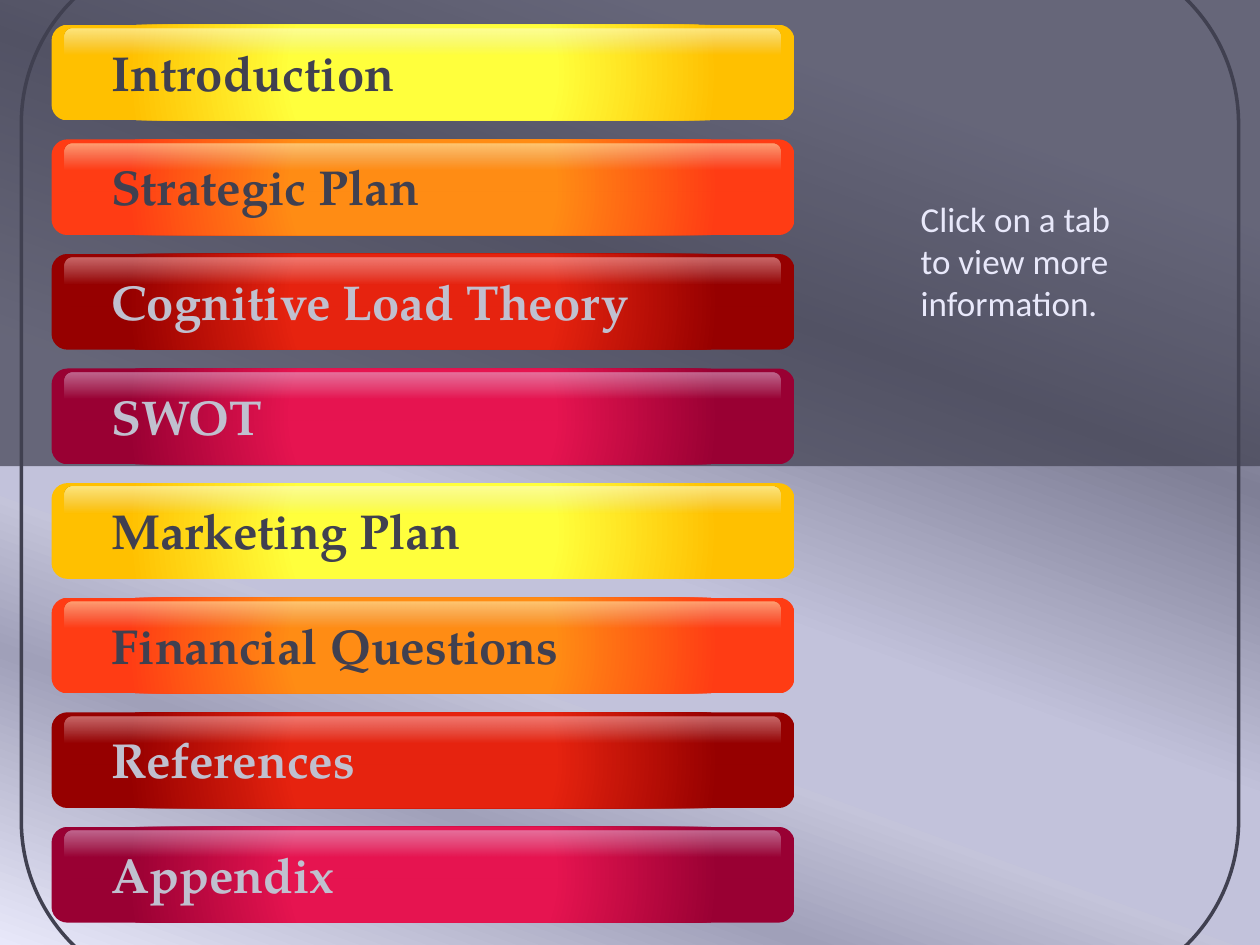
"""Build a navigation slide with eight glossy tabs and a short instruction."""
from lxml import etree
from pptx import Presentation
from pptx.dml.color import RGBColor
from pptx.enum.shapes import MSO_SHAPE
from pptx.oxml import parse_xml
from pptx.oxml.ns import nsdecls, qn
from pptx.util import Cm, Pt

ROUNDED = MSO_SHAPE.ROUNDED_RECTANGLE
RECTANGLE = MSO_SHAPE.RECTANGLE
DARK, SILVER, PALE = "404050", "C0C0CF", "E8E8FA"
LINEAR = '<a:lin ang="{}" scaled="0"/>'
RADIAL = '<a:path path="circle"><a:fillToRect l="50000" t="50000" r="50000" b="50000"/></a:path>'


def set_gradient(properties, stops, direction):
    """Replace the solid fill by (position, colour, opacity) stops in percent."""
    marks = "".join(
        f'<a:gs pos="{position * 1000}"><a:srgbClr val="{colour}">'
        f'<a:alpha val="{opacity * 1000}"/></a:srgbClr></a:gs>'
        for position, colour, opacity in stops)
    gradient = parse_xml(f'<a:gradFill {nsdecls("a")} rotWithShape="1">'
                         f'<a:gsLst>{marks}</a:gsLst>{direction}</a:gradFill>')
    properties.replace(properties.find(qn("a:solidFill")), gradient)


def add_panel(preset, left, top, width, height, colour):
    """Add a flat, borderless shape measured in centimetres."""
    panel = slide.shapes.add_shape(preset, Cm(left), Cm(top), Cm(width), Cm(height))
    panel.shadow.inherit = False
    panel.fill.solid()
    panel.fill.fore_color.rgb = RGBColor.from_string(colour)
    panel.line.fill.background()
    return panel


prs = Presentation()
prs.slide_width, prs.slide_height = Cm(25.4), Cm(19.05)
slide = prs.slides.add_slide(prs.slide_layouts[6])

slide.background.fill.solid()
backdrop = [(16, "C0C0DC", 100), (35, "7F7F96", 100), (57, "C2C2DB", 100),
            (68, "C4C4DA", 100), (79, "A0A0B9", 100), (100, PALE, 100)]
set_gradient(slide.element.find(".//" + qn("p:bgPr")), backdrop, LINEAR.format(110 * 60000))

frame = add_panel(ROUNDED, 0.43, -1.02, 24.54, 21.08, DARK)
frame.fill.background()
frame.line.color.rgb = RGBColor.from_string(DARK)
frame.line.width = Pt(2)

shade = add_panel(RECTANGLE, 0, 0, 25.4, 9.4, DARK)
shade_colour = shade.element.spPr.find(qn("a:solidFill"))[0]
etree.SubElement(shade_colour, qn("a:alpha")).set("val", "70000")

themes = [("FFFF3C", "FFC000", "FFFFCC", 60, DARK),
          ("FF8C14", "FF3C14", "FFFFCC", 50, DARK),
          ("E6230F", "960000", "FFCCCC", 50, SILVER),
          ("E61450", "990033", "E6C8E6", 50, SILVER)]
labels = ["Introduction", "Strategic Plan", "Cognitive Load Theory", "SWOT",
          "Marketing Plan", "Financial Questions", "References", "Appendix"]
captions = []
for row, label in enumerate(labels):
    centre, edge, shine, opacity, ink = themes[row % len(themes)]
    top = 0.5 + 2.31 * row
    tab = add_panel(ROUNDED, 1.04, top, 14.98, 1.93, edge)
    set_gradient(tab.element.spPr, [(35, centre, 100), (79, edge, 100)], RADIAL)
    gloss = add_panel(ROUNDED, 1.3, top + 0.08, 14.43, 0.97, shine)
    set_gradient(gloss.element.spPr, [(0, shine, opacity), (55, "E1E8F5", 0)],
                 LINEAR.format(90 * 60000))
    captions.append((label, 2, top + 0.23, 13.03, 1.45, "TeX Gyre Pagella", 28, ink, True))

captions.append(("Click on a tab to view more information.",
                 18.31, 3.86, 4.88, 2.82, "Calibri", 20, PALE, False))
for words, left, top, width, height, font_name, size, ink, bold in captions:
    caption = slide.shapes.add_textbox(Cm(left), Cm(top), Cm(width), Cm(height)).text_frame
    caption.word_wrap = True
    caption.text = words
    font = caption.paragraphs[0].font
    font.name, font.size, font.bold = font_name, Pt(size), bold
    font.color.rgb = RGBColor.from_string(ink)

prs.save("out.pptx")
